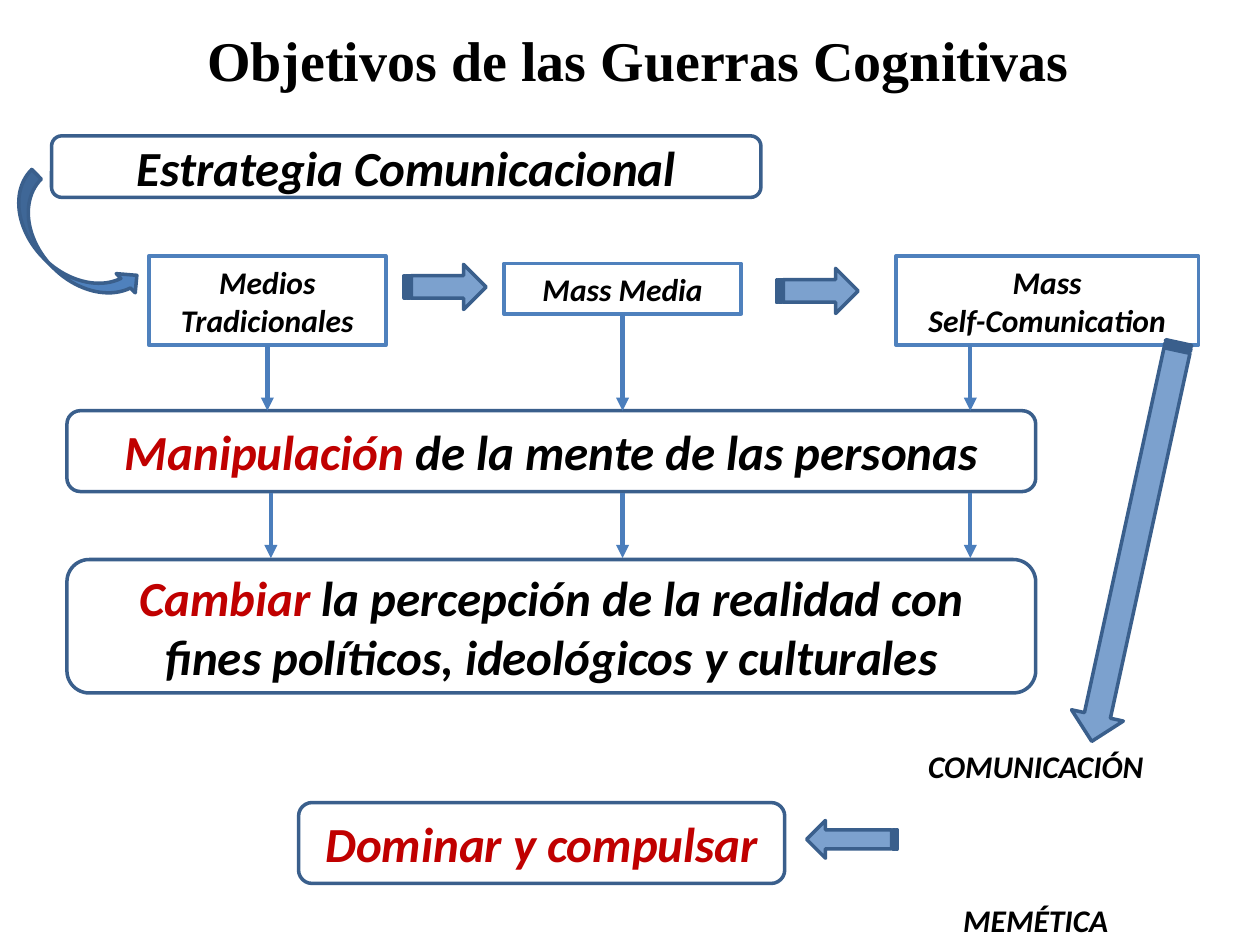
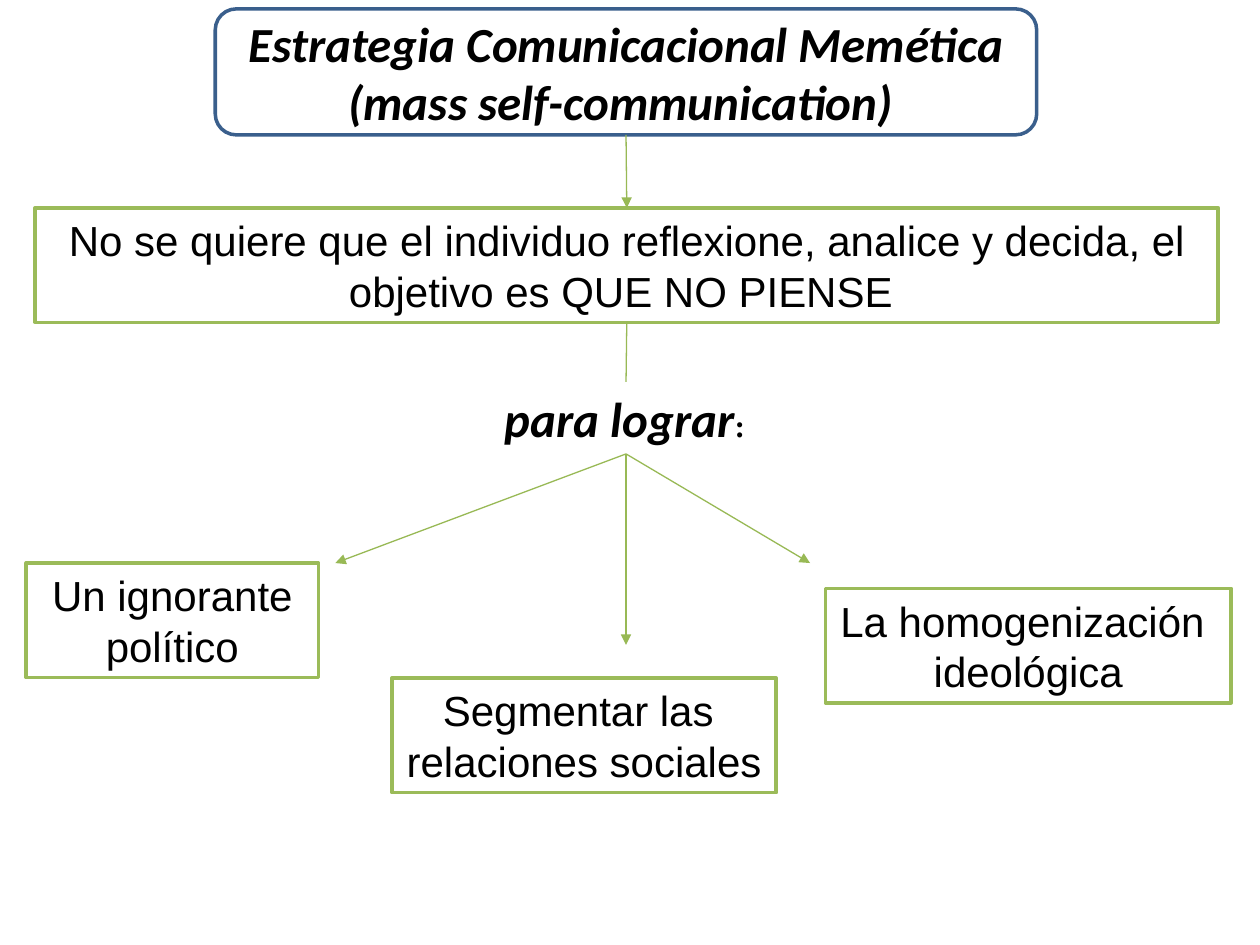
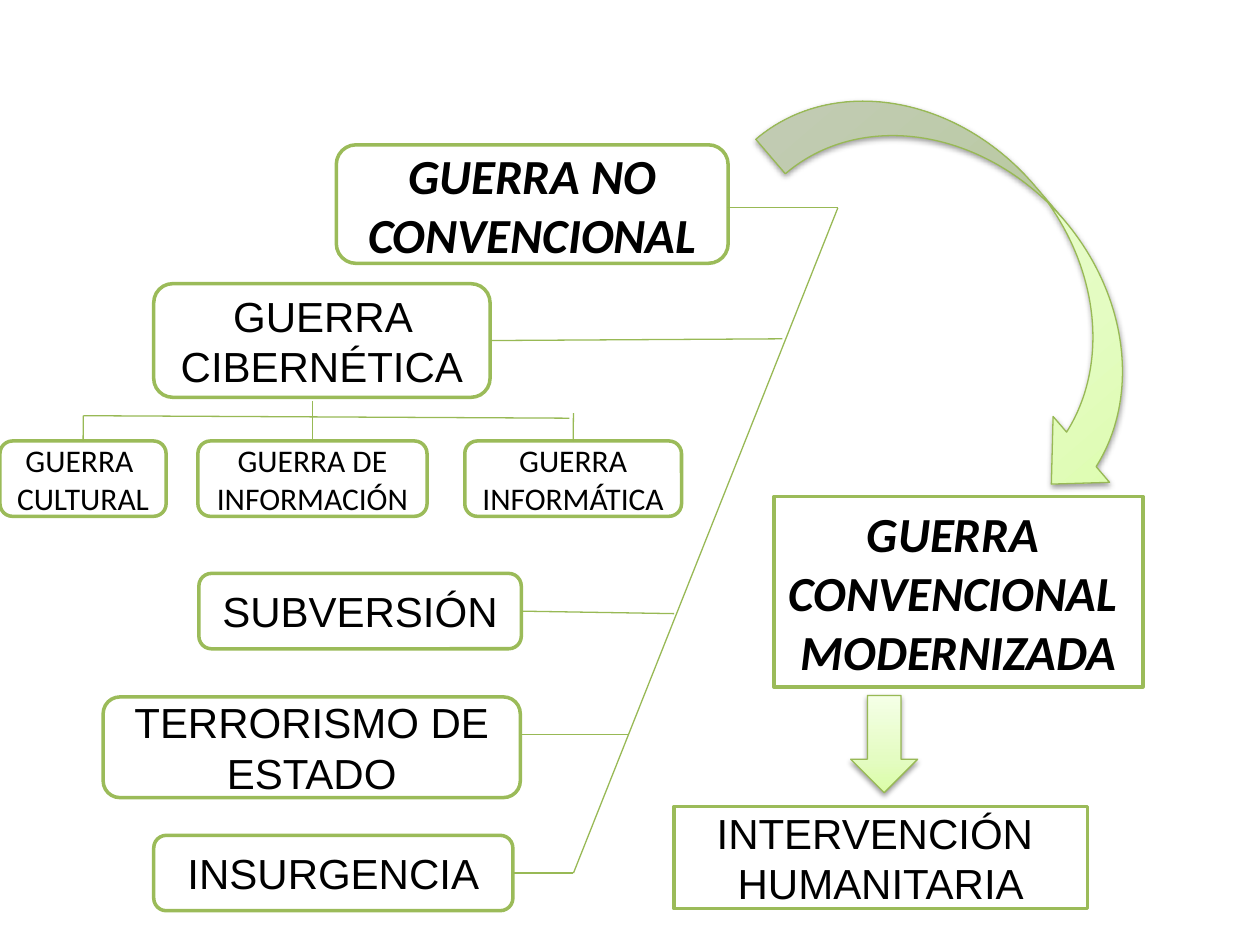
from lxml import etree
from pptx import Presentation
from pptx.dml.color import RGBColor
from pptx.enum.shapes import MSO_CONNECTOR as Conn, MSO_SHAPE as Form
from pptx.enum.text import MSO_ANCHOR as Anchor, PP_ALIGN as Align
from pptx.oxml import parse_xml
from pptx.oxml.ns import nsdecls, qn
from pptx.util import Cm, Pt

BLACK = RGBColor(0x00, 0x00, 0x00)
WHITE = RGBColor(0xFF, 0xFF, 0xFF)
RED = RGBColor(0xC0, 0x00, 0x00)
BLUE = RGBColor(0x4F, 0x81, 0xBD)
NAVY = RGBColor(0x3A, 0x5F, 0x8C)
STEEL = RGBColor(0x4B, 0x7E, 0xBC)
GREEN = RGBColor(0x9B, 0xBB, 0x59)
OLIVE = RGBColor(0x98, 0xB9, 0x55)
TIMES = "Times New Roman"
TOP, RIGHT, BOTTOM = 0, 3, 2


def box(page, form, place, text="", size=28, font="Calibri", bold=True,
        line=None, fill=None, width=2):
    """Add a shape, or a text box if form is None; words before | are red."""
    place = [Cm(n) for n in place]
    if form is None:
        shape = page.shapes.add_textbox(*place)
    else:
        shape = page.shapes.add_shape(form, *place)
        shape.shadow.inherit = False
        shape.line.color.rgb = line
        shape.line.width = Pt(width)
        if fill is None:
            shape.fill.background()
        else:
            shape.fill.solid()
            shape.fill.fore_color.rgb = fill
    frame = shape.text_frame
    frame.word_wrap = True
    frame.vertical_anchor = Anchor.MIDDLE
    if not text:
        return shape
    for i, row in enumerate(text.split("\n")):
        para = frame.add_paragraph() if i else frame.paragraphs[0]
        para.alignment = Align.CENTER
        red, _, rest = row.rpartition("|")
        for part, hue in ((red, RED), (rest, BLACK)):
            if part:
                run = para.add_run()
                run.text = part
                run.font.size, run.font.name = Pt(size), font
                run.font.bold = run.font.italic = bold
                run.font.color.rgb = hue
    return shape


def link(page, start, end, hue=OLIVE, width=0.75, head=False):
    """Draw a line; each end is a point or a (shape, side) pair."""
    spots = [p if isinstance(p[0], (int, float)) else (0, 0) for p in (start, end)]
    line = page.shapes.add_connector(
        Conn.STRAIGHT, *[Cm(n) for spot in spots for n in spot])
    for p, join in ((start, line.begin_connect), (end, line.end_connect)):
        if not isinstance(p[0], (int, float)):
            join(*p)
    line.line.color.rgb = hue
    line.line.width = Pt(width)
    if head:
        etree.SubElement(line.line._get_or_add_ln(), qn("a:tailEnd"), type="triangle")
    etree.SubElement(line._element.spPr, qn("a:effectLst"))


deck = Presentation()
deck.slide_width, deck.slide_height = Cm(25.4), Cm(19.05)
goals = deck.slides.add_slide(deck.slide_layouts[5])
meme, war = [deck.slides.add_slide(deck.slide_layouts[6]) for _ in range(2)]

# Slide 1: title
title = goals.shapes.title
title.left, title.top, title.width, title.height = Cm(3.84), Cm(0.38), Cm(18.06), Cm(1.63)
title.text_frame.text = "Objetivos de las Guerras Cognitivas"
title.text_frame.word_wrap = False
title.text_frame.vertical_anchor = Anchor.MIDDLE
para = title.text_frame.paragraphs[0]
para.alignment = Align.CENTER
font = para.runs[0].font
font.size, font.name, font.bold, font.color.rgb = Pt(32), TIMES, True, BLACK

# Slide 1: media and goals
media = []
for place, text in (
    ((3, 5.16, 4.78, 1.8), "Medios\nTradicionales"),
    ((10.16, 5.31, 4.78, 1.02), "Mass Media"),
    ((18.06, 5.16, 6.1, 1.8), "Mass\nSelf-Comunication"),
):
    media.append(box(goals, Form.RECTANGLE, place, text, 18, line=BLUE))
for place, text in (
    ((1.04, 2.74, 14.3, 1.24), "Estrategia Comunicacional"),
    ((1.35, 8.28, 19.53, 1.63), "Manipulación| de la mente de las personas"),
    ((1.35, 11.28, 19.53, 2.69), "Cambiar| la percepción de la realidad con fines "
                                 "políticos, ideológicos y culturales"),
    ((6.02, 16.18, 9.8, 1.63), "Dominar y compulsar|"),
):
    box(goals, Form.ROUNDED_RECTANGLE, place, text, line=NAVY)
label = box(goals, None, (14.53, 14.94, 12.7, 4.11), "COMUNICACIÓN\nMEMÉTICA", 18)
label.text_frame.paragraphs[1].space_before = Pt(66)

# Slide 1: arrows
curve = box(goals, Form.CURVED_UP_ARROW, (-0.23, 4.42, 3.28, 1.09), line=NAVY, fill=BLUE)
curve.rotation = 45.2
for place, turn in (
    ((8.15, 5.33, 1.65, 0.91), 0),
    ((15.65, 5.41, 1.65, 0.91), 0),
    ((18.77, 10.39, 8.23, 1.07), 102.3),
    ((16.26, 16.54, 1.83, 0.76), 180),
):
    arrow = box(goals, Form.STRIPED_RIGHT_ARROW, place, line=NAVY, fill=BLUE)
    arrow.rotation = turn
    tint = arrow._element.spPr.find(qn("a:solidFill"))[0]
    etree.SubElement(tint, qn("a:alpha"), val="74000")
for start, end in (
    ((media[0], BOTTOM), (5.39, 8.28)),
    ((media[1], BOTTOM), (12.55, 8.28)),
    ((19.56, 6.96), (19.56, 8.28)),
    ((5.46, 9.93), (5.46, 11.25)),
    ((12.55, 9.93), (12.55, 11.25)),
    ((19.56, 9.93), (19.56, 11.25)),
):
    link(goals, start, end, STEEL, 2.5, True)

# Slide 2: boxes
head = box(meme, Form.ROUNDED_RECTANGLE, (4.34, 0.18, 16.56, 2.54),
           "Estrategia Comunicacional Memética\n(mass self-communication) ", line=NAVY)
parts = []
for place, text in (
    ((0.71, 4.19, 23.85, 2.31), "No se quiere que el individuo reflexione, analice y "
                                "decida, el objetivo es QUE NO PIENSE "),
    ((0.53, 11.35, 5.89, 2.31), " Un ignorante \npolítico"),
    ((16.64, 11.86, 8.18, 2.31), "La homogenización \nideológica"),
    ((7.9, 13.67, 7.75, 2.31), "Segmentar las \nrelaciones sociales"),
):
    parts.append(box(meme, Form.RECTANGLE, place, text, 24, "Arial", False, GREEN, WHITE))
aim = box(meme, None, (9.93, 7.7, 5.38, 1.45), "para lograr")
aim.text_frame.word_wrap = False
para = aim.text_frame.paragraphs[0]
para.alignment = Align.LEFT
colon = para.add_run()
colon.text = ":"
font = colon.font
font.size, font.name, font.bold, font.color.rgb = Pt(18), TIMES, True, BLACK

# Slide 2: lines
link(meme, (head, BOTTOM), (parts[0], TOP), head=True)
link(meme, (parts[0], BOTTOM), (aim, TOP))
for end in ((6.76, 11.35), (12.62, 13), (16.33, 11.35)):
    link(meme, (aim, BOTTOM), end, head=True)

# Slide 3: boxes
ROUND, RECT = Form.ROUNDED_RECTANGLE, Form.RECTANGLE
BIG, MID, SMALL = (28, "Calibri", True), (24, "Arial", False), (18, "Calibri", False)
nodes = {}
for name, form, place, text, look in (
    ("main", ROUND, (6.78, 2.92, 7.9, 2.39), "GUERRA NO\nCONVENCIONAL", BIG),
    ("cyber", ROUND, (3.1, 5.72, 6.78, 2.29), "GUERRA CIBERNÉTICA", MID),
    ("culture", ROUND, (0, 8.89, 3.35, 1.52), "GUERRA \nCULTURAL", SMALL),
    ("info", ROUND, (3.99, 8.89, 4.62, 1.52), "GUERRA DE\nINFORMACIÓN", SMALL),
    ("data", ROUND, (9.37, 8.89, 4.37, 1.52), "GUERRA INFORMÁTICA", SMALL),
    ("subvert", ROUND, (4.01, 11.56, 6.5, 1.52), "SUBVERSIÓN", MID),
    ("terror", ROUND, (2.08, 14.05, 8.41, 2.03), "TERRORISMO DE\nESTADO", MID),
    ("revolt", ROUND, (3.1, 16.84, 7.24, 1.52), "INSURGENCIA", MID),
    ("aid", RECT, (13.59, 16.26, 8.33, 2.06), "INTERVENCIÓN \nHUMANITARIA", MID),
    ("modern", RECT, (15.6, 10.01, 7.44, 3.84),
     "GUERRA \nCONVENCIONAL \nMODERNIZADA", BIG),
):
    nodes[name] = box(war, form, place, text, *look, GREEN, WHITE)

# Slide 3: lines
for start, end in (
    ((14.66, 4.19), (16.89, 4.19)),
    ((16.89, 4.19), (11.56, 17.6)),
    ((15.77, 6.83), (nodes["cyber"], RIGHT)),
    ((11.48, 8.43), (1.68, 8.38)),
    ((1.68, 8.38), (nodes["culture"], TOP)),
    ((6.3, 8.08), (nodes["info"], TOP)),
    ((11.56, 8.33), (nodes["data"], TOP)),
    ((13.59, 12.37), (nodes["subvert"], RIGHT)),
    ((12.67, 14.81), (10.52, 14.81)),
    ((11.56, 17.6), (nodes["revolt"], RIGHT)),
):
    link(war, start, end)

# Slide 3: shaded arrows
SHADE = (
    f'<a:gradFill {nsdecls("a")} rotWithShape="1"><a:gsLst>'
    '<a:gs pos="0"><a:srgbClr val="DAFDA7"/></a:gs>'
    '<a:gs pos="35000"><a:srgbClr val="E4FCC2"/></a:gs>'
    '<a:gs pos="100000"><a:srgbClr val="F5FFE7"/></a:gs>'
    '</a:gsLst><a:lin ang="16200000" scaled="1"/></a:gradFill>')
SHADOW = (
    f'<a:outerShdw {nsdecls("a")} blurRad="39370" dist="20320" dir="5400000" '
    'rotWithShape="0"><a:srgbClr val="000000"><a:alpha val="38000"/></a:srgbClr>'
    '</a:outerShdw>')
for form, place, turn in (
    (Form.CURVED_LEFT_ARROW, (18.06, 0.41, 3.66, 10.03), 319.4),
    (Form.DOWN_ARROW, (17.15, 14.02, 1.35, 1.96), 0),
):
    arrow = box(war, form, place, line=OLIVE, fill=WHITE, width=0.75)
    arrow.rotation = turn
    if form == Form.CURVED_LEFT_ARROW:
        arrow.adjustments[1] = 0.478
    props = arrow._element.spPr
    props.replace(props.find(qn("a:solidFill")), parse_xml(SHADE))
    props.find(qn("a:effectLst")).append(parse_xml(SHADOW))

deck.save("out.pptx")
